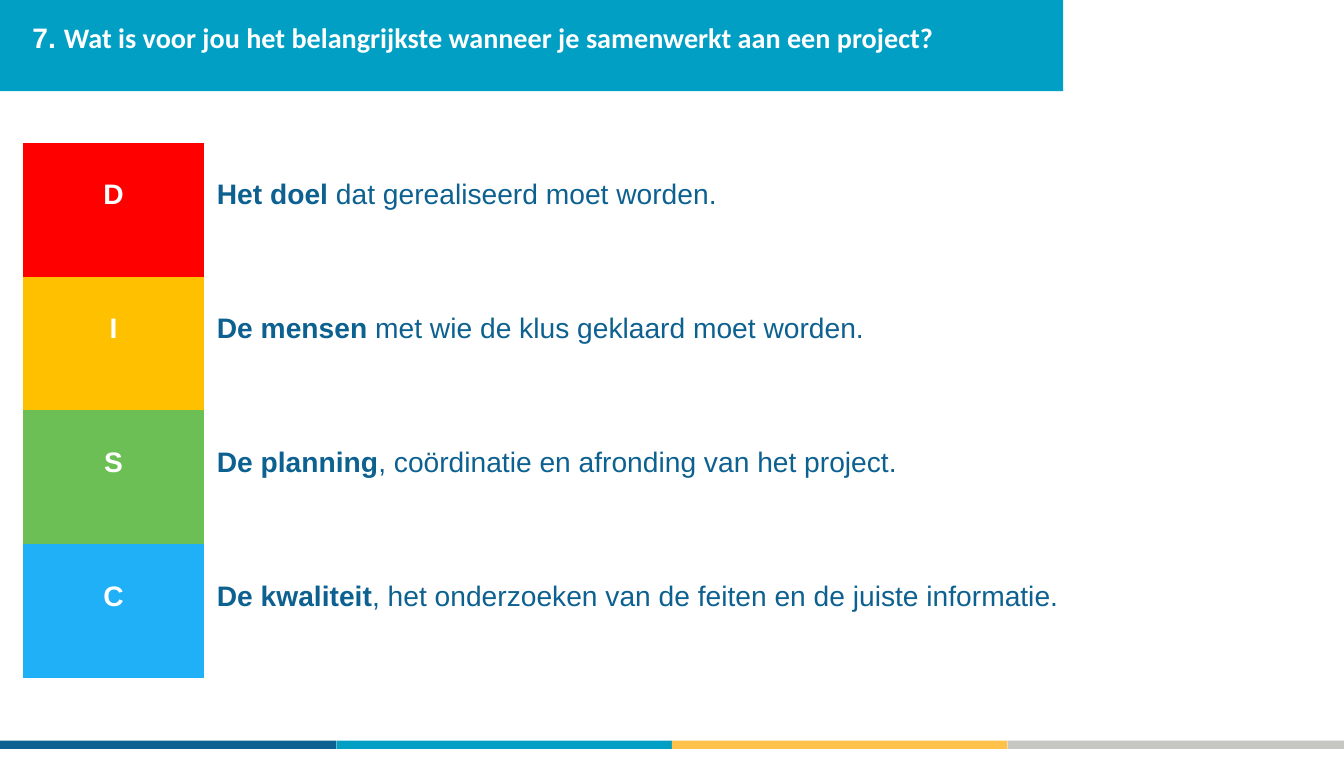
"""Build the slide with the four DISC answers to question 7."""
from dataclasses import dataclass

from pptx import Presentation
from pptx.dml.color import RGBColor as Rgb
from pptx.enum.shapes import MSO_SHAPE as Shape
from pptx.enum.text import MSO_ANCHOR as Anchor, MSO_AUTO_SIZE as AutoSize, PP_ALIGN as Align
from pptx.oxml.ns import qn
from pptx.util import Pt

PX = 9144


@dataclass(frozen=True)
class Theme:
    """Colours, fonts and type size of the slide."""
    navy: str = "0D6190"
    teal: str = "009FC3"
    yellow: str = "FEC24A"
    grey: str = "C6C6C3"
    white: str = "FFFFFF"
    body_font: str = "Arial"
    title_font: str = "Calibri"
    size: int = 20


theme = Theme()
deck = Presentation()
deck.slide_width, deck.slide_height = 1326 * PX, 750 * PX
page = deck.slides.add_slide(deck.slide_layouts[5])


def add_bar(left, top, width, height, colour):
    """Add a plain filled rectangle."""
    bar = page.shapes.add_shape(Shape.RECTANGLE, left * PX, top * PX, width * PX, height * PX)
    bar.shadow.inherit = False
    bar.fill.solid()
    bar.fill.fore_color.rgb = Rgb.from_string(colour)
    bar.line.fill.background()


def add_span(para, text, colour, bold=True, font=theme.body_font):
    """Add a formatted run to a paragraph."""
    span = para.add_run()
    span.text = text
    span.font.name, span.font.size, span.font.bold = font, Pt(theme.size), bold
    span.font.color.rgb = Rgb.from_string(colour)


footer_colours = [theme.navy, theme.teal, theme.yellow, theme.grey]
edges = [round(index * 1326 / 4) for index in range(5)]
for left, right, colour in zip(edges, edges[1:], footer_colours):
    add_bar(left, 731, right - left, 8, colour)
add_bar(0, 0, 1049, 90, theme.teal)

answers = [
    ("D", "FF0000", "Het doel ", "dat gerealiseerd moet worden."),
    ("I", "FFC000", "De mensen ", "met wie de klus geklaard moet worden."),
    ("S", "6CBF55", "De planning", ", coördinatie en afronding van het project."),
    ("C", "20B0F8", "De kwaliteit", ", het onderzoeken van de feiten en de juiste informatie."),
]
frame = page.shapes.add_table(len(answers), 2, 23 * PX, 141 * PX, 1279 * PX, 528 * PX)
table = frame.table
table.first_row = table.horz_banding = False
style = next(frame.element.iter(qn("a:tableStyleId")))
style.text = "{2D5ABB26-0587-4C30-8999-92F81FD0307C}"
table.columns[0].width, table.columns[1].width = 178 * PX, 1101 * PX

for row, (letter, colour, key, rest) in enumerate(answers):
    table.rows[row].height = 132 * PX
    letter_cell, answer_cell = table.cell(row, 0), table.cell(row, 1)
    for cell in (letter_cell, answer_cell):
        cell.margin_left = cell.margin_right = 13 * PX
        cell.margin_top, cell.margin_bottom = 36 * PX, 5 * PX
        cell.vertical_anchor = Anchor.TOP
    letter_cell.fill.solid()
    letter_cell.fill.fore_color.rgb = Rgb.from_string(colour)
    answer_cell.fill.background()
    letter_para = letter_cell.text_frame.paragraphs[0]
    letter_para.alignment = Align.CENTER
    add_span(letter_para, letter, theme.white)
    answer_para = answer_cell.text_frame.paragraphs[0]
    add_span(answer_para, key, theme.navy)
    add_span(answer_para, rest, theme.navy, bold=False)

title = page.shapes.title
title.left, title.top, title.width, title.height = 18 * PX, 20 * PX, 999 * PX, 61 * PX
title_frame = title.text_frame
title_frame.auto_size = AutoSize.NONE
title_frame.word_wrap = True
title_frame.vertical_anchor = Anchor.TOP
title_frame.margin_left, title_frame.margin_top = 14 * PX, 0
title_para = title_frame.paragraphs[0]
title_para.alignment = Align.LEFT
add_span(title_para, "7. ", theme.white)
add_span(title_para, "Wat is voor jou het belangrijkste wanneer je samenwerkt aan een project?",
         theme.white, font=theme.title_font)
title.element.getparent().append(title.element)

deck.save("out.pptx")
